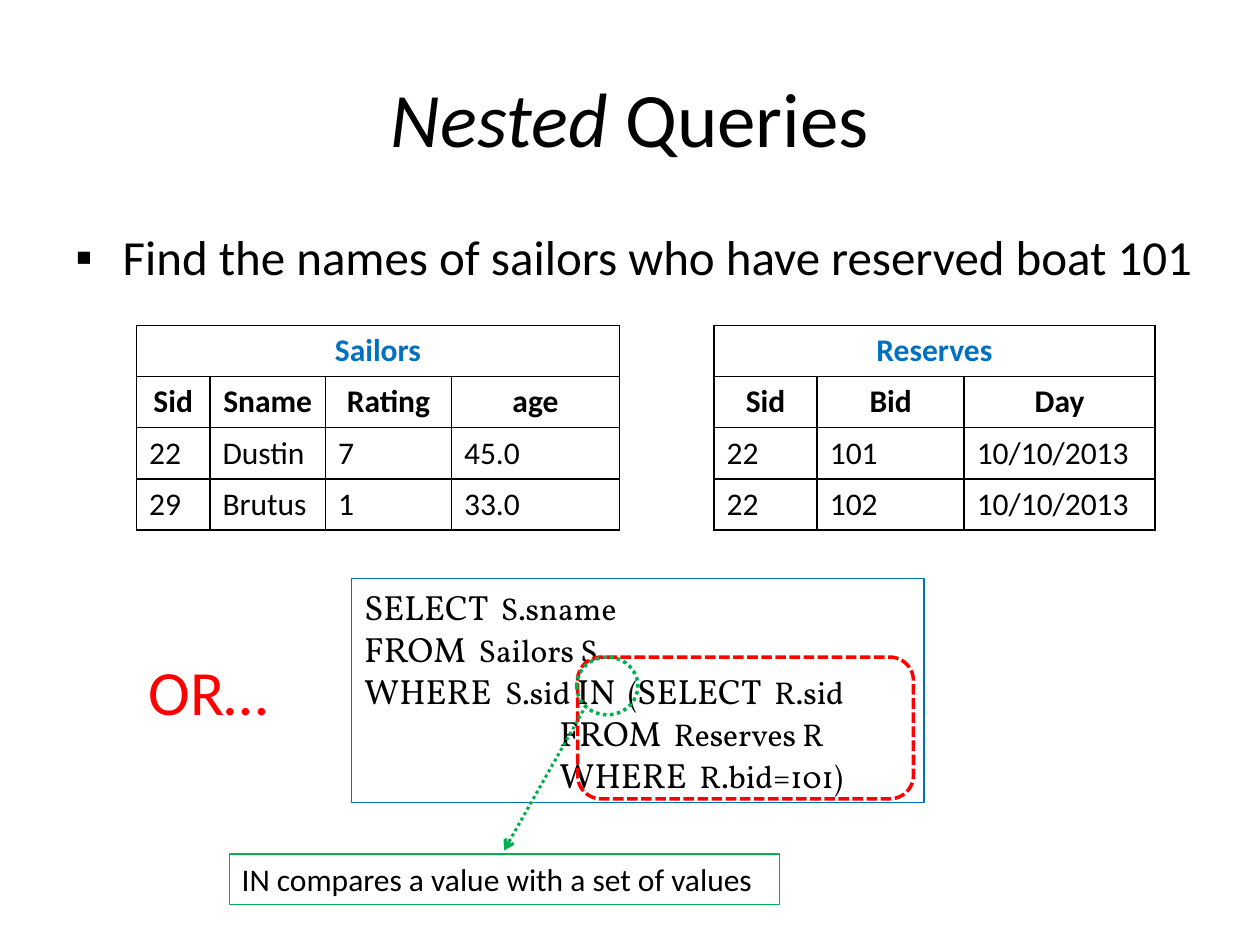
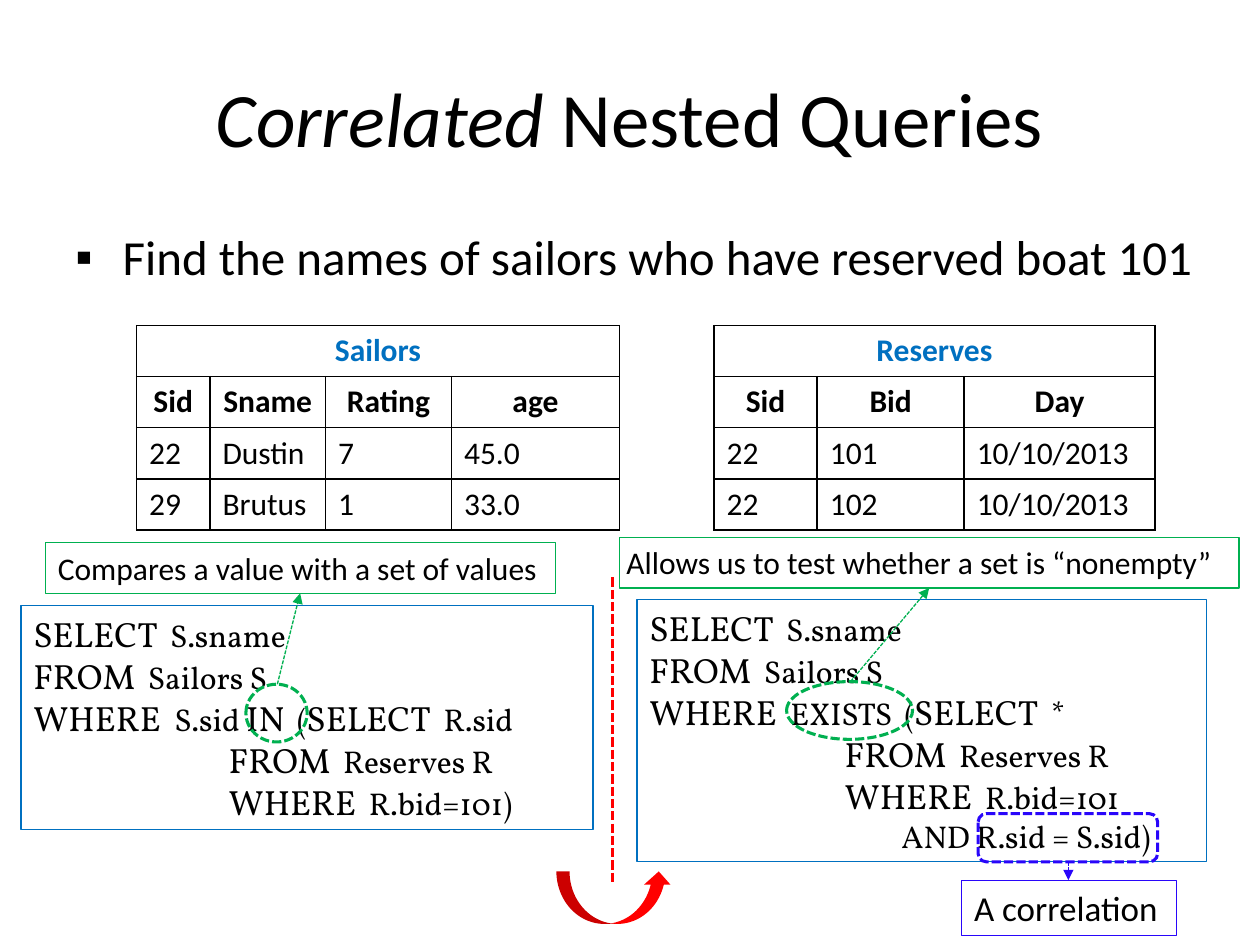
from lxml import etree
from pptx import Presentation
from pptx.dml.color import RGBColor
from pptx.enum.dml import MSO_LINE
from pptx.enum.shapes import MSO_CONNECTOR, MSO_SHAPE
from pptx.enum.text import MSO_ANCHOR, PP_ALIGN
from pptx.oxml.ns import qn
from pptx.util import Pt

RECT = MSO_SHAPE.RECTANGLE
ROUND_RECT = MSO_SHAPE.ROUNDED_RECTANGLE
OVAL = MSO_SHAPE.OVAL
CURVED_ARROW = MSO_SHAPE.CURVED_UP_ARROW
STRAIGHT = MSO_CONNECTOR.STRAIGHT
DASH = MSO_LINE.SQUARE_DOT
DOT = MSO_LINE.ROUND_DOT
CENTER = PP_ALIGN.CENTER
LEFT = PP_ALIGN.LEFT
TOP = MSO_ANCHOR.TOP
MIDDLE = MSO_ANCHOR.MIDDLE

BLACK, BLUE, RED = "000000", "0070C0", "FF0000"
GREEN, VIOLET = "00B050", "2906FA"
BODY_FONT, CODE_FONT = "Calibri", "Vollkorn"

QUESTION = "Find the names of sailors who have reserved boat 101"
SAILORS = [
    ["Sid", "Sname", "Rating", "age"],
    ["22", "Dustin", "7", "45.0"],
    ["29", "Brutus", "1", "33.0"],
]
RESERVES = [
    ["Sid", "Bid", "Day"],
    ["22", "101", "10/10/2013"],
    ["22", "102", "10/10/2013"],
]
SUBQUERY_INDENT = " " * 31
QUERY_START = ["|SELECT | S.sname", "|FROM|  Sailors S"]
SUBQUERY_FROM = SUBQUERY_INDENT + "|FROM|  Reserves R"
SUBQUERY_WHERE = SUBQUERY_INDENT + "|WHERE|  R.bid=101"
IN_QUERY = QUERY_START + [
    "|WHERE | S.sid |IN|  (|SELECT|  R.sid",
    SUBQUERY_FROM,
    SUBQUERY_WHERE + ")",
]
EXISTS_QUERY = QUERY_START + [
    "|WHERE | EXISTS  (|SELECT|  *",
    SUBQUERY_FROM,
    SUBQUERY_WHERE,
]


def rgb(value):
    return RGBColor.from_string(value)


def points(values):
    return [Pt(value) for value in values]


def write(para, text, size=18, font=BODY_FONT, color=BLACK, bold=False,
          align=LEFT, marked_size=None, marked_italic=False):
    para.alignment = align
    for index, part in enumerate(text.split("|")):
        if not part:
            continue
        marked = index % 2 == 1
        span = para.add_run()
        span.text = part
        span.font.name = font
        span.font.size = Pt(marked_size if marked and marked_size else size)
        span.font.bold = bold
        span.font.italic = marked and marked_italic
        span.font.color.rgb = rgb(color)


def prepare(frame, anchor=TOP, side=7.2):
    frame.word_wrap = True
    frame.vertical_anchor = anchor
    frame.margin_left = frame.margin_right = Pt(side)
    frame.margin_top = frame.margin_bottom = Pt(3.6)
    return frame


def text_box(page, box, text, anchor=TOP, **style):
    frame = prepare(page.shapes.add_textbox(*points(box)).text_frame, anchor)
    write(frame.paragraphs[0], text, **style)
    return frame.paragraphs[0]


def style_line(line, color, width, dash=None):
    line.color.rgb = rgb(color)
    line.width = Pt(width)
    if dash:
        line.dash_style = dash


def outline(page, kind, box, color, width=0.75, dash=None):
    shape = page.shapes.add_shape(kind, *points(box))
    shape.shadow.inherit = False
    shape.fill.background()
    style_line(shape.line, color, width, dash)
    return shape


def connect(page, start, end, color, width=0.75, dash=DASH, head=None):
    link = page.shapes.add_connector(STRAIGHT, *points(start + end))
    style_line(link.line, color, width, dash)
    properties = link.line._get_or_add_ln()
    if head:
        etree.SubElement(properties, qn("a:tailEnd"), type=head)
    etree.SubElement(properties.getparent(), qn("a:effectLst"))


def callout(page, box, text, color, size=18, side=7.2):
    shape = outline(page, RECT, box, color)
    frame = prepare(shape.text_frame, side=side)
    write(frame.paragraphs[0], text, size=size)


def border(cell):
    properties = cell._tc.get_or_add_tcPr()
    for index, name in enumerate(("lnL", "lnR", "lnT", "lnB")):
        edge = etree.Element(qn("a:" + name), w=str(Pt(1)))
        fill = etree.SubElement(edge, qn("a:solidFill"))
        etree.SubElement(fill, qn("a:srgbClr"), val=BLACK)
        properties.insert(index, edge)


def relation(page, left, top, name, rows, widths):
    row_height = 29.2
    grid_rows = [[name] + [""] * (len(widths) - 1)] + rows
    box = (left, top, sum(widths), row_height * len(grid_rows))
    table = page.shapes.add_table(len(grid_rows), len(widths), *points(box)).table
    table.first_row = table.horz_banding = False
    for column, width in zip(table.columns, widths):
        column.width = Pt(width)
    for row_index, values in enumerate(grid_rows):
        table.rows[row_index].height = Pt(row_height)
        heading = row_index < 2
        for column_index, value in enumerate(values):
            cell = table.cell(row_index, column_index)
            cell.fill.background()
            border(cell)
            write(cell.text_frame.paragraphs[0], value, bold=heading,
                  color=BLACK if row_index else BLUE,
                  align=CENTER if heading else LEFT)
    table.cell(0, 0).merge(table.cell(0, len(widths) - 1))


def query(page, box, lines):
    frame = prepare(outline(page, RECT, box, BLUE).text_frame, MIDDLE)
    for index, line in enumerate(lines):
        para = frame.add_paragraph() if index else frame.paragraphs[0]
        write(para, line, font=CODE_FONT, marked_size=20)
    return frame


def in_query(page, left, top):
    query(page, (left, top, 327, 128), IN_QUERY)


def in_mark(page, left, top, width, dash):
    outline(page, OVAL, (left + 128.5, top + 45, 35, 33), GREEN, width, dash)


def exists_query(page, left, top):
    frame = query(page, (left, top, 325.5, 150), EXISTS_QUERY)
    condition = frame.add_paragraph()
    condition._p.get_or_add_pPr().set("marL", str(Pt(144)))
    write(condition, "AND R.sid = S.sid)", font=CODE_FONT)
    outline(page, OVAL, (left + 85.5, top + 47, 72, 33), GREEN, 1.75, DASH)
    outline(page, ROUND_RECT, (left + 195, top + 122.5, 102.5, 27.5), VIOLET, 1.75, DASH)


def base_page(deck, title):
    page = deck.slides.add_slide(deck.slide_layouts[6])
    text_box(page, (36, 21.6, 648, 90), title, anchor=MIDDLE, size=44,
             align=CENTER, marked_italic=True)
    para = text_box(page, (36, 126, 684, 356), QUESTION, size=28)
    properties = para._p.get_or_add_pPr()
    properties.set("marL", str(Pt(27)))
    properties.set("indent", str(Pt(-27)))
    etree.SubElement(properties, qn("a:buFont"), typeface="Arial")
    etree.SubElement(properties, qn("a:buChar"), char="▪")
    relation(page, 78, 186, "Sailors", SAILORS, (42, 66, 72, 96))
    relation(page, 408, 186, "Reserves", RESERVES, (59, 84, 109))
    return page


def nested_page(deck):
    page = base_page(deck, "|Nested| Queries")
    left, top = 201, 330.5
    in_query(page, left, top)
    text_box(page, (78, 369.5, 86, 51), "OR…", size=36, color=RED)
    outline(page, ROUND_RECT, (left + 129, top + 45, 192, 81), RED, 2, DASH)
    in_mark(page, left, top, 2, DOT)
    connect(page, (335, 403), (288, 486), GREEN, 1.75, DOT, "arrow")
    callout(page, (131, 488, 314.5, 29), "IN compares a value with a set of values", GREEN)


def correlated_page(deck):
    page = base_page(deck, "|Correlated| Nested Queries")
    in_query(page, 12, 346)
    connect(page, (350, 330), (350, 504), RED, 1.75)
    turn = page.shapes.add_shape(CURVED_ARROW, *points((318, 498, 66, 30)))
    turn.shadow.inherit = False
    turn.fill.solid()
    turn.fill.fore_color.rgb = rgb(RED)
    turn.line.fill.background()
    exists_query(page, 364, 342.5)
    callout(page, (549.5, 503, 123, 31.5), "A correlation", VIOLET, size=20)
    callout(page, (354, 307, 354, 29), "Allows us to test whether a set is “nonempty”",
            GREEN, side=4)
    connect(page, (486, 389.5), (531, 336), GREEN, head="triangle")
    connect(page, (610.5, 492.5), (610.5, 503), VIOLET, head="triangle")
    callout(page, (26, 310, 291.5, 29), "Compares a value with a set of values", GREEN)
    in_mark(page, 12, 346, 1.75, DASH)
    connect(page, (158.5, 391), (171.5, 339), GREEN, head="triangle")


def main():
    deck = Presentation()
    deck.slide_width, deck.slide_height = Pt(720), Pt(540)
    nested_page(deck)
    correlated_page(deck)
    deck.save("out.pptx")


if __name__ == "__main__":
    main()
